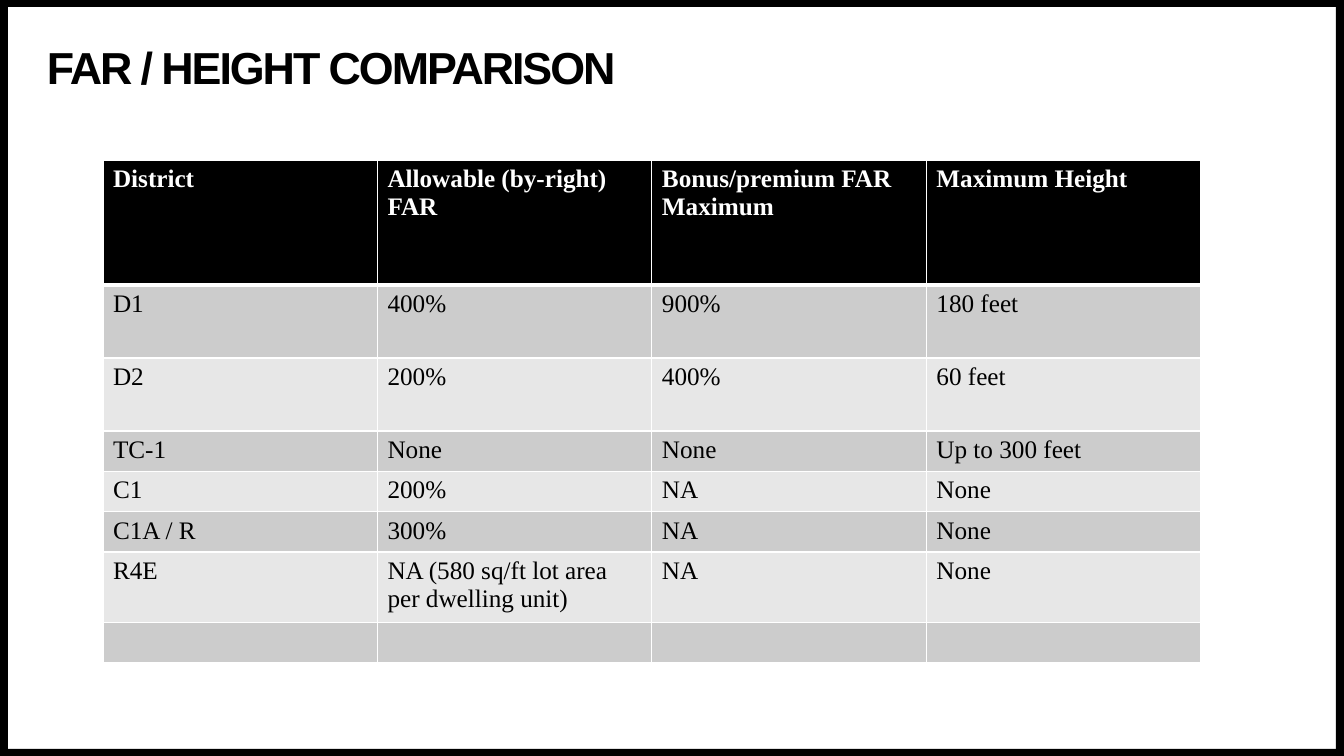
from lxml import etree
from pptx import Presentation
from pptx.dml.color import RGBColor
from pptx.enum.shapes import MSO_SHAPE
from pptx.enum.text import MSO_ANCHOR
from pptx.oxml.ns import qn
from pptx.util import Emu, Pt

RECTANGLE = MSO_SHAPE.RECTANGLE
MIDDLE = MSO_ANCHOR.MIDDLE
BLACK = RGBColor(0x00, 0x00, 0x00)
WHITE = RGBColor(0xFF, 0xFF, 0xFF)
DARK_BAND = RGBColor(0xCC, 0xCC, 0xCC)
LIGHT_BAND = RGBColor(0xE7, 0xE7, 0xE7)
SLIDE_W, SLIDE_H = 1344, 756
ROW_HEIGHTS = [125, 73, 73, 38, 38, 38, 66, 38]
DISTRICTS = [
    ("District", "Allowable (by-right) FAR", "Bonus/premium FAR Maximum", "Maximum Height"),
    ("D1", "400%", "900%", "180 feet"),
    ("D2", "200%", "400%", "60 feet"),
    ("TC-1", "None", "None", "Up to 300 feet"),
    ("C1", "200%", "NA", "None"),
    ("C1A / R", "300%", "NA", "None"),
    ("R4E", "NA (580 sq/ft lot area per dwelling unit)", "NA", "None"),
    ("", "", "", ""),
]


def px(*lengths):
    return [Emu(round(length * 914400 / 100.8)) for length in lengths]


def add_border(cell, side, points):
    line = etree.SubElement(cell._tc.get_or_add_tcPr(), qn("a:" + side), w=str(Pt(points)))
    fill = etree.SubElement(line, qn("a:solidFill"))
    etree.SubElement(fill, qn("a:srgbClr"), val=str(WHITE))


prs = Presentation()
prs.slide_width, prs.slide_height = px(SLIDE_W, SLIDE_H)
slide = prs.slides.add_slide(prs.slide_layouts[6])
slide.background.fill.solid()
slide.background.fill.fore_color.rgb = WHITE

for edge in [
    (0, SLIDE_H - 7, SLIDE_W, 7),
    (0, 0, SLIDE_W, 7),
    (0, 0, 8, SLIDE_H),
    (SLIDE_W - 8, 0, 8, SLIDE_H),
]:
    frame_bar = slide.shapes.add_shape(RECTANGLE, *px(*edge))
    frame_bar.shadow.inherit = False
    frame_bar.fill.solid()
    frame_bar.fill.fore_color.rgb = BLACK
    frame_bar.line.fill.background()

heading = slide.shapes.add_textbox(*px(47, 47, 1014, 47)).text_frame
heading.word_wrap = True
heading.vertical_anchor = MIDDLE
heading.margin_left = heading.margin_right = heading.margin_top = heading.margin_bottom = 0
heading.text = "FAR / HEIGHT COMPARISON"
heading.paragraphs[0].line_spacing = 0.9
heading_run = heading.paragraphs[0].runs[0]
heading_run.font.name = "Arial"
heading_run.font.size = Pt(32)
heading_run.font.bold = True
heading_run.font.color.rgb = BLACK
heading_run.font._element.set("spc", "-150")

comparison = slide.shapes.add_table(
    len(DISTRICTS), len(DISTRICTS[0]), *px(103, 160, 1098, sum(ROW_HEIGHTS))
).table
for row_index, (values, height) in enumerate(zip(DISTRICTS, ROW_HEIGHTS)):
    is_header = row_index == 0
    band = BLACK if is_header else DARK_BAND if row_index % 2 else LIGHT_BAND
    comparison.rows[row_index].height = px(height)[0]
    for column_index, value in enumerate(values):
        cell = comparison.cell(row_index, column_index)
        cell.text = value
        for run in cell.text_frame.paragraphs[0].runs:
            run.font.name = "Times New Roman"
            run.font.size = Pt(18)
            run.font.bold = is_header
            run.font.color.rgb = WHITE if is_header else BLACK
        for side in ("lnL", "lnR", "lnT", "lnB"):
            header_rule = (row_index, side) in ((0, "lnB"), (1, "lnT"))
            add_border(cell, side, 3 if header_rule else 1)
        cell.fill.solid()
        cell.fill.fore_color.rgb = band

prs.save("out.pptx")
